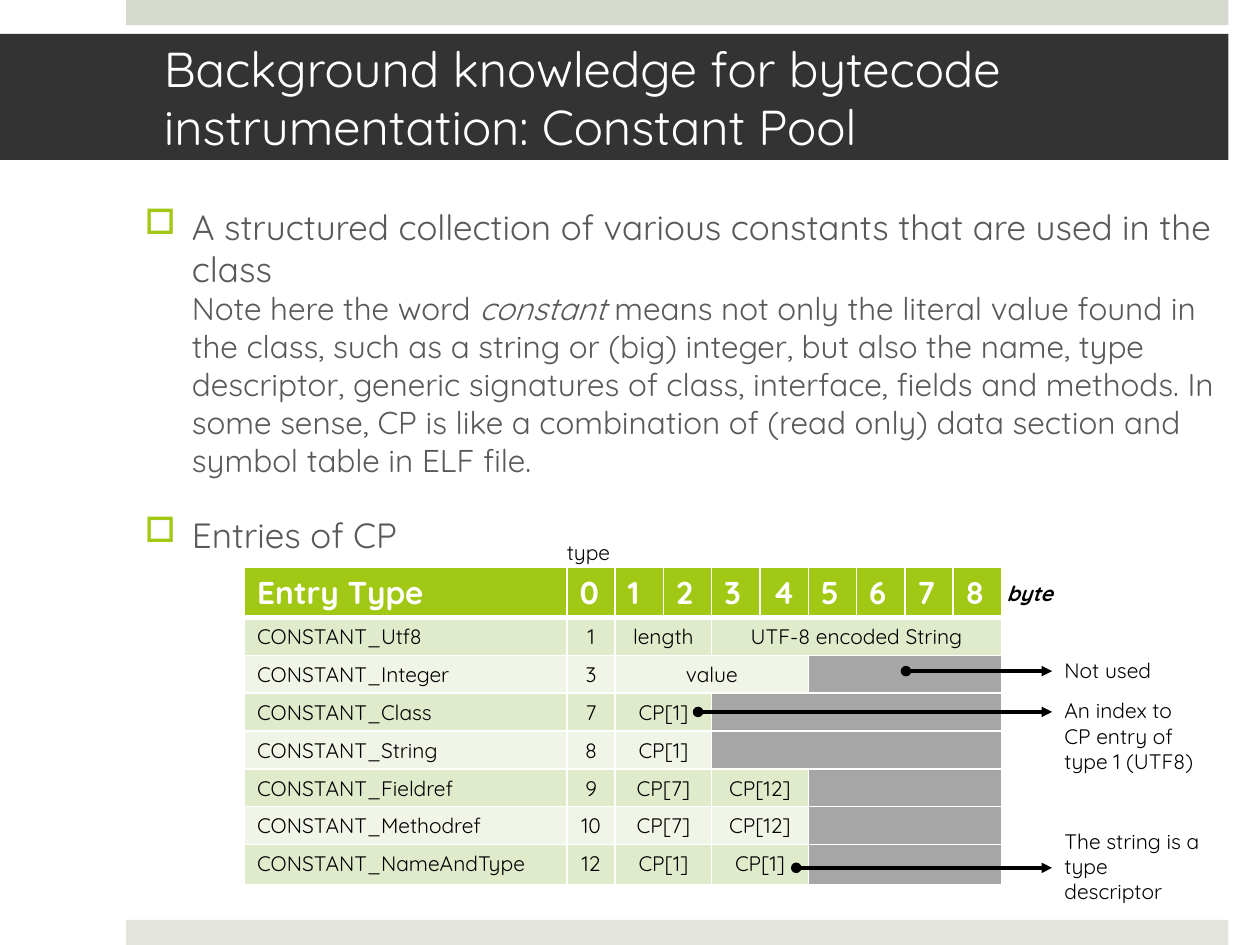
from dataclasses import dataclass
from typing import NamedTuple, Optional

from lxml import etree
from pptx import Presentation
from pptx.dml.color import RGBColor
from pptx.enum import shapes, text
from pptx.oxml.ns import qn
from pptx.util import Pt


@dataclass(frozen=True)
class Theme:
    font: str = "Quicksand"
    white: str = "FFFFFF"
    black: str = "000000"
    dark: str = "333333"
    grey_text: str = "595959"
    green: str = "A2C816"
    bands: tuple = ("E0EBCC", "F0F5E8")
    unused: str = "A6A6A6"
    top_bar: str = "D6D9CD"
    bottom_bar: str = "E4E6DE"
    title: float = 28
    bullet: float = 20
    note: float = 18
    label: float = 12


class Box(NamedTuple):
    left: float
    top: float
    width: float
    height: float


class Field(NamedTuple):
    text: str
    byte_count: int


class Entry(NamedTuple):
    name: str
    tag: str
    fields: tuple


class Callout(NamedTuple):
    text: str
    box: Box
    start_x: float
    line_y: Optional[float] = None  # None: joined to the middle of the label


THEME = Theme()
BYTE_COUNT = 9
BYTE_WIDTH = 27.6
NAME_WIDTH = 184.3
LABEL_LEFT = 601.2
LABEL_WIDTH = 93.6

ENTRIES = [
    Entry("CONSTANT_Utf8", "1", (Field("length", 2), Field("UTF-8 encoded String", 6))),
    Entry("CONSTANT_Integer", "3", (Field("value", 4),)),
    Entry("CONSTANT_Class", "7", (Field("CP[1]", 2),)),
    Entry("CONSTANT_String", "8", (Field("CP[1]", 2),)),
    Entry("CONSTANT_Fieldref", "9", (Field("CP[7]", 2), Field("CP[12]", 2))),
    Entry("CONSTANT_Methodref", "10", (Field("CP[7]", 2), Field("CP[12]", 2))),
    Entry("CONSTANT_NameAndType", "12", (Field("CP[1]", 2), Field("CP[1]", 2))),
]
CALLOUTS = [
    Callout("An index to CP entry of type 1 (UTF8)",
            Box(LABEL_LEFT, 395.3, LABEL_WIDTH, 52.2), 398.9, 406.8),
    Callout("Not used", Box(LABEL_LEFT, 372.4, LABEL_WIDTH, 22.2), 517.7),
    Callout("The string is a type descriptor",
            Box(LABEL_LEFT, 469.8, LABEL_WIDTH, 52.2), 455),
]


def points(box: Box) -> list:
    return [Pt(length) for length in box]


def add_run(paragraph, content: str, *, size: float = THEME.label,
            color: str = THEME.black, bold: bool = False, italic: bool = False) -> None:
    run = paragraph.add_run()
    run.text = content
    run.font.name = THEME.font
    run.font.size = Pt(size)
    run.font.bold = bold
    run.font.italic = italic
    run.font.color.rgb = RGBColor.from_string(color)


def fill_solid(target, color: str) -> None:
    target.fill.solid()
    target.fill.fore_color.rgb = RGBColor.from_string(color)


def add_bar(slide, box: Box, color: str) -> None:
    bar = slide.shapes.add_shape(shapes.MSO_SHAPE.RECTANGLE, *points(box))
    bar.shadow.inherit = False
    fill_solid(bar, color)
    bar.line.fill.background()


def add_title(slide, content: str) -> None:
    title = slide.shapes.title
    title.left, title.top, title.width, title.height = points(Box(0, 19.4, 702, 72))
    fill_solid(title, THEME.dark)
    frame = title.text_frame
    frame.auto_size = text.MSO_AUTO_SIZE.NONE
    frame.vertical_anchor = text.MSO_ANCHOR.MIDDLE
    frame.margin_left, frame.margin_right = Pt(93.6), Pt(21.6)
    frame.paragraphs[0].alignment = text.PP_ALIGN.LEFT
    add_run(frame.paragraphs[0], content, size=THEME.title, color=THEME.white)


def add_label(slide, box: Box, content: str, **style):
    label = slide.shapes.add_textbox(*points(box))
    label.text_frame.word_wrap = True
    label.text_frame.auto_size = text.MSO_AUTO_SIZE.SHAPE_TO_FIT_TEXT
    add_run(label.text_frame.paragraphs[0], content, **style)
    return label


def format_bullet(paragraph) -> None:
    paragraph.space_before = Pt(20)
    properties = paragraph._p.get_or_add_pPr()
    properties.set("marL", str(Pt(27)))
    properties.set("indent", str(Pt(-27)))
    color = etree.SubElement(properties, qn("a:buClr"))
    etree.SubElement(color, qn("a:srgbClr"), val=THEME.green)
    etree.SubElement(properties, qn("a:buChar"), char="□")


def add_body(slide) -> None:
    frame = slide.shapes.add_textbox(*points(Box(75.6, 113.8, 626.4, 400.3))).text_frame
    frame.word_wrap = True
    heading = {"size": THEME.bullet, "color": THEME.grey_text}
    note = {"size": THEME.note, "color": THEME.grey_text}
    definition, entries = frame.paragraphs[0], frame.add_paragraph()
    for paragraph in (definition, entries):
        format_bullet(paragraph)
    add_run(definition, "A structured collection of various constants that are used "
            "in the class", **heading)
    definition.add_line_break()
    add_run(definition, "Note here the word ", **note)
    add_run(definition, "constant", italic=True, **note)
    add_run(definition, " means not only the literal value found in the class, such as a "
            "string or (big) integer, but also the name, type descriptor, generic "
            "signatures of class, interface, fields and methods. In some sense, CP is "
            "like a combination of (read only) data section and symbol table in ELF "
            "file.", **note)
    add_run(entries, "Entries of CP", **heading)


def format_cell(cell, fill: str, bottom: float = 1) -> None:
    """Set the fill and white borders, and keep an empty cell at label height."""
    properties = cell._tc.get_or_add_tcPr()
    for side, width in (("L", 1), ("R", 1), ("T", 1), ("B", bottom)):
        border = etree.SubElement(properties, qn(f"a:ln{side}"), w=str(Pt(width)))
        color = etree.SubElement(etree.SubElement(border, qn("a:solidFill")),
                                 qn("a:srgbClr"))
        color.set("val", THEME.white)
    fill_solid(cell, fill)
    if not cell.text_frame.text:
        etree.SubElement(cell.text_frame.paragraphs[0]._p, qn("a:endParaRPr"),
                         sz=str(round(THEME.label * 100)))


def add_entry(table, row: int, entry: Entry) -> None:
    band = THEME.bands[(row - 1) % 2]
    used = 1 + sum(field.byte_count for field in entry.fields)
    fields = (Field(entry.name, 1), Field(entry.tag, 1), *entry.fields)
    if used < BYTE_COUNT:
        fields += (Field("", BYTE_COUNT - used),)
    column = 0
    for field in fields:
        cell = table.cell(row, column)
        last = column + field.byte_count - 1
        if last > column:
            cell.merge(table.cell(row, last))
        if field.text:
            paragraph = cell.text_frame.paragraphs[0]
            if column:
                paragraph.alignment = text.PP_ALIGN.CENTER
            add_run(paragraph, field.text)
        for covered in range(column, last + 1):
            format_cell(table.cell(row, covered), band if field.text else THEME.unused)
        column = last + 1


def add_entry_table(slide) -> None:
    frame = slide.shapes.add_table(len(ENTRIES) + 1, BYTE_COUNT + 1,
                                   *points(Box(139.7, 324, 432.7, 181.4)))
    table = frame.table
    for index, column in enumerate(table.columns):
        column.width = Pt(BYTE_WIDTH if index else NAME_WIDTH)
    for index, row in enumerate(table.rows):
        row.height = Pt(23 if index in (0, len(ENTRIES)) else 18.7)
    for column, heading in enumerate(["Entry Type", *map(str, range(BYTE_COUNT))]):
        cell = table.cell(0, column)
        add_run(cell.text_frame.paragraphs[0], heading, size=THEME.note,
                color=THEME.white, bold=True)
        format_cell(cell, THEME.green, bottom=3)
    for row, entry in enumerate(ENTRIES, start=1):
        add_entry(table, row, entry)


def add_callout(slide, callout: Callout) -> None:
    label = add_label(slide, callout.box, callout.text)
    line_y = callout.line_y or callout.box.top + callout.box.height / 2
    arrow = slide.shapes.add_connector(shapes.MSO_CONNECTOR.STRAIGHT, Pt(callout.start_x),
                                       Pt(line_y), Pt(callout.box.left), Pt(line_y))
    if callout.line_y is None:
        arrow.end_connect(label, 1)
    arrow.line.width = Pt(2)
    arrow.line.color.rgb = RGBColor.from_string(THEME.black)
    line = arrow.line._get_or_add_ln()
    etree.SubElement(line, qn("a:headEnd"), type="oval")
    etree.SubElement(line, qn("a:tailEnd"), type="triangle")
    etree.SubElement(arrow._element.spPr, qn("a:effectLst"))


def main() -> None:
    presentation = Presentation()
    presentation.slide_width, presentation.slide_height = Pt(720), Pt(540)
    slide = presentation.slides.add_slide(presentation.slide_layouts[5])
    add_bar(slide, Box(72, 0, 630, 14.4), THEME.top_bar)
    add_bar(slide, Box(72, 525.6, 630, 14.4), THEME.bottom_bar)
    add_title(slide, "Background knowledge for bytecode instrumentation: Constant Pool")
    add_body(slide)
    add_entry_table(slide)
    for callout in CALLOUTS:
        add_callout(slide, callout)
    add_label(slide, Box(568.1, 328.3, 43.9, 22.2), "byte", bold=True, italic=True)
    add_label(slide, Box(316.8, 304.6, 43.9, 22.2), "type")
    presentation.save("out.pptx")


if __name__ == "__main__":
    main()
